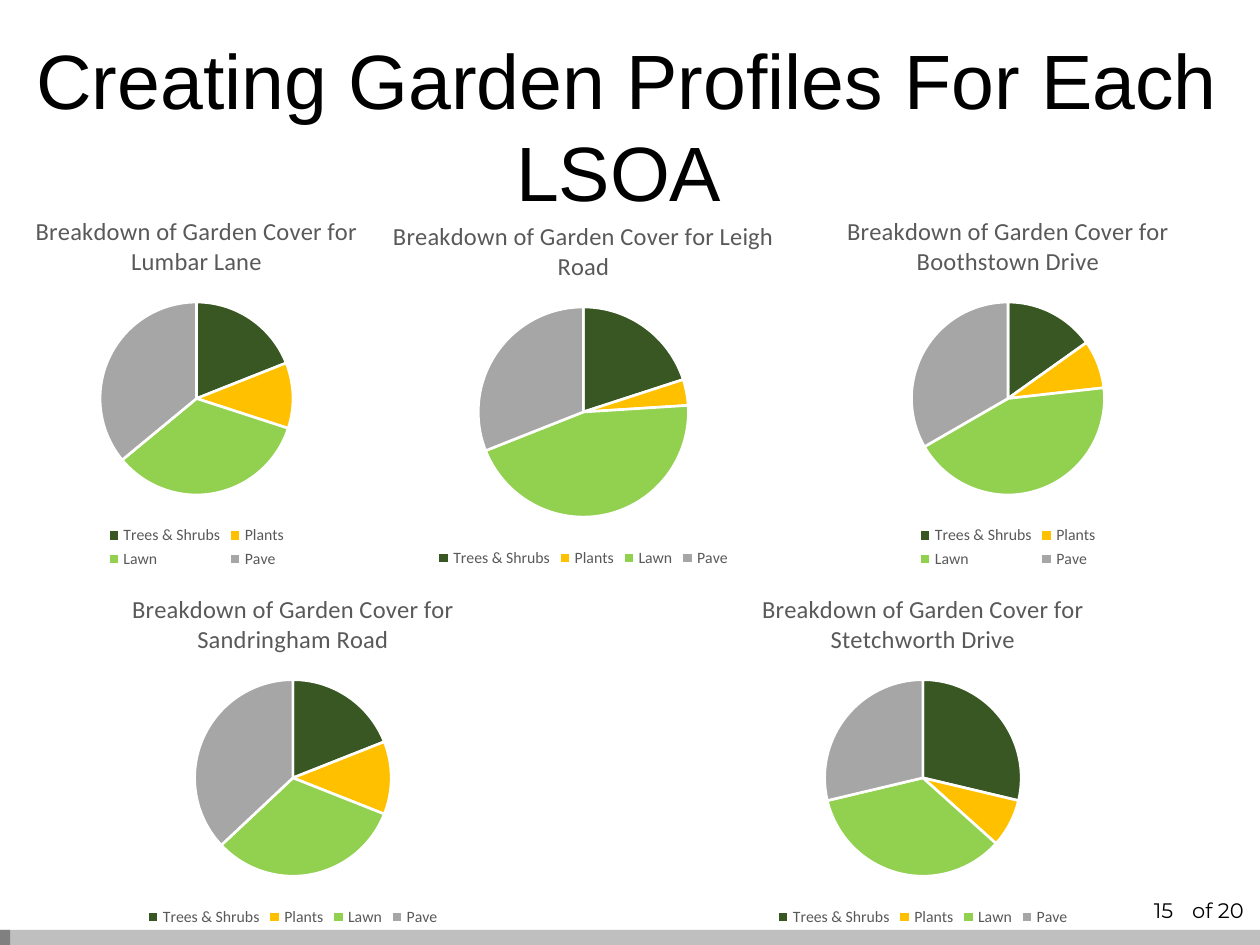
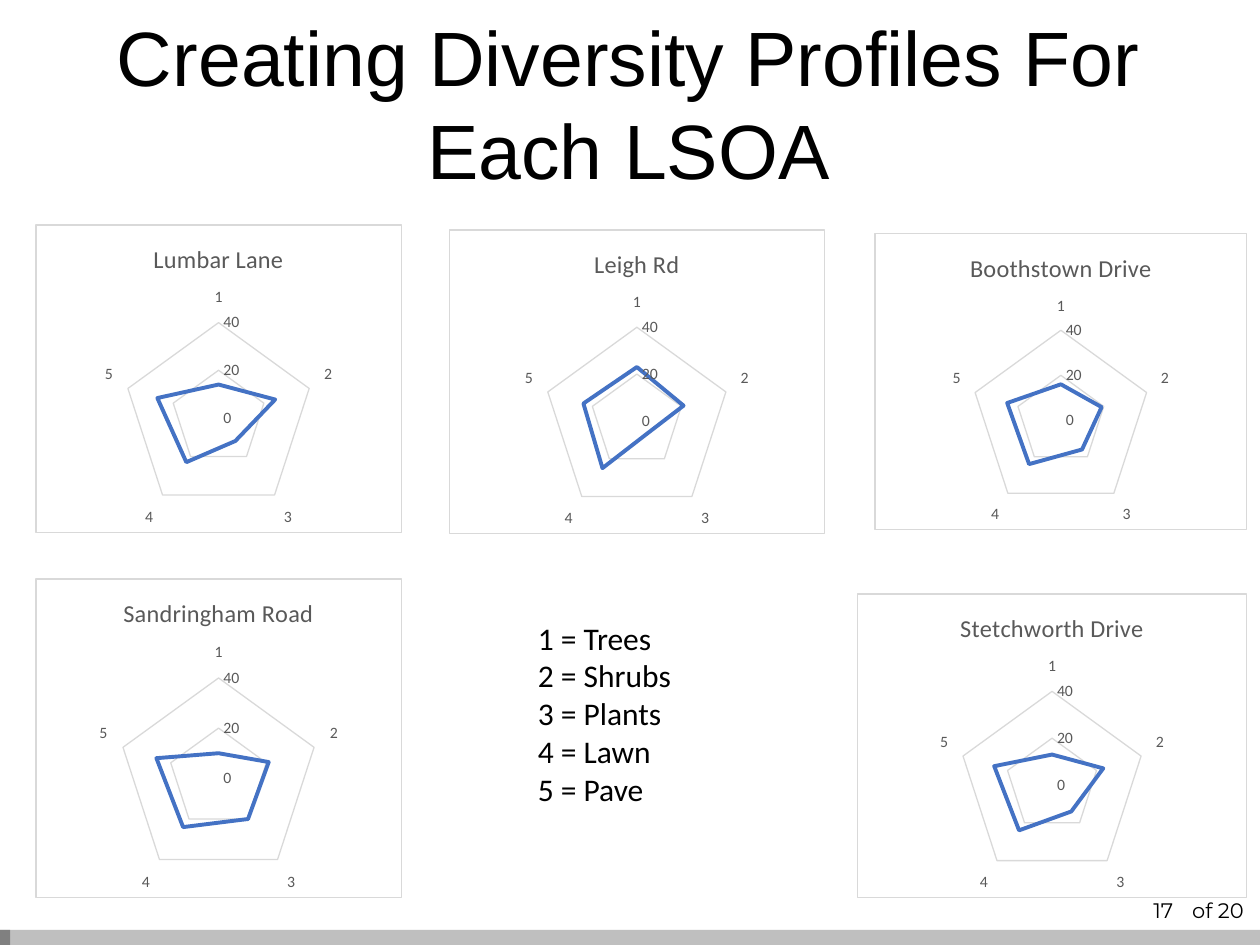
from lxml import etree
from pptx import Presentation
from pptx.chart.data import CategoryChartData
from pptx.dml.color import RGBColor
from pptx.enum.chart import XL_CHART_TYPE, XL_LEGEND_POSITION, XL_TICK_MARK
from pptx.enum.shapes import MSO_SHAPE
from pptx.enum.text import MSO_ANCHOR, PP_ALIGN
from pptx.util import Inches, Pt

PIE, RADAR = XL_CHART_TYPE.PIE, XL_CHART_TYPE.RADAR
BOTTOM = XL_LEGEND_POSITION.BOTTOM
TICK_OUT, TICK_NONE = XL_TICK_MARK.OUTSIDE, XL_TICK_MARK.NONE
RECTANGLE = MSO_SHAPE.RECTANGLE
TOP, MIDDLE = MSO_ANCHOR.TOP, MSO_ANCHOR.MIDDLE
LEFT, CENTER, RIGHT = PP_ALIGN.LEFT, PP_ALIGN.CENTER, PP_ALIGN.RIGHT

COLORS = {
    "black": "000000", "white": "FFFFFF", "label": "595959",
    "band": "BFBFBF", "band_start": "808080",
    "trees": "385723", "plants": "FFC000", "lawn": "92D050", "pave": "A6A6A6",
    "grid": "D9D9D9", "axis": "898989", "profile": "4472C4",
}
COVER_COLORS = {"Trees & Shrubs": "trees", "Plants": "plants",
                "Lawn": "lawn", "Pave": "pave"}
DIVERSITY_KEY = ["Trees", "Shrubs", "Plants", "Lawn", "Pave"]
PAGE_COUNT = 20

# place, box (left, top, width, height), values
GARDEN_COVER = [
    ("Lumbar Lane", (-0.12, 1.55, 3.36, 3), (19, 11, 34, 36)),
    ("Leigh Road", (2.6, 1.59, 4.06, 2.95), (20, 4, 45, 31)),
    ("Boothstown Drive", (6.04, 1.55, 3.92, 3), (15, 8, 43, 33)),
    ("Sandringham Road", (0.13, 4.55, 4.39, 2.84), (19, 12, 32, 37)),
    ("Stetchworth Drive", (5.1, 4.55, 4.45, 2.84), (29, 8, 35, 29)),
]
DIVERSITY = [
    ("Lumbar Lane", (0.28, 1.78, 2.91, 2.45), (14, 25, 12, 23, 27)),
    ("Leigh Rd", (3.56, 1.82, 2.99, 2.42), (23, 21, 7, 25, 24)),
    ("Boothstown Drive", (6.94, 1.85, 2.96, 2.36), (16, 19, 16, 24, 25)),
    ("Sandringham Road", (0.28, 4.59, 2.91, 2.54), (10, 21, 20, 24, 26)),
    ("Stetchworth Drive", (6.8, 4.71, 3.1, 2.42), (13, 23, 14, 24, 26)),
]


def rgb(name):
    return RGBColor.from_string(COLORS[name])


def inches(box):
    return [Inches(length) for length in box]


def format_font(font, size, color="label", name="Calibri"):
    font.size, font.name, font.bold = Pt(size), name, False
    font.color.rgb = rgb(color)


def format_line(line, color, width):
    line.color.rgb = rgb(color)
    line.width = Pt(width)


def frame_chart(chart):
    """Give the chart area a white fill and a thin border."""
    namespace = "http://schemas.openxmlformats.org/drawingml/2006/"
    properties = etree.fromstring(
        f'<c:spPr xmlns:c="{namespace}chart" xmlns:a="{namespace}main">'
        f'<a:solidFill><a:srgbClr val="{COLORS["white"]}"/></a:solidFill>'
        f'<a:ln w="{Pt(0.75)}"><a:solidFill><a:srgbClr val="{COLORS["grid"]}"/>'
        '</a:solidFill></a:ln></c:spPr>')
    chart.element.find(f"{{{namespace}chart}}chart").addnext(properties)


class Deck:
    def __init__(self):
        self.presentation = Presentation()
        self.presentation.slide_width = Inches(10)
        self.presentation.slide_height = Inches(7.5)
        self.slide = None

    def add_slide(self, page):
        self.slide = self.presentation.slides.add_slide(
            self.presentation.slide_layouts[6])
        footer = dict(size=12, font="Montserrat", align=RIGHT, anchor=MIDDLE)
        self.text(str(page), (8.94, 7, 0.47, 0.45), **footer)
        self.text(f"of {PAGE_COUNT}", (9.1, 7, 0.87, 0.45), **footer)
        self.band(10, "band")
        self.band(0.08, "band_start")

    def text(self, text, box, size=18, font="Calibri", color="black",
             align=LEFT, anchor=TOP):
        frame = self.slide.shapes.add_textbox(*inches(box)).text_frame
        frame.word_wrap = True
        frame.vertical_anchor = anchor
        frame.text = text
        for paragraph in frame.paragraphs:
            paragraph.alignment = align
            format_font(paragraph.font, size, color, font)

    def title(self, text, box):
        self.text(text, box, size=44, font="Arial", align=CENTER)

    def band(self, width, color):
        shape = self.slide.shapes.add_shape(
            RECTANGLE, *inches((0, 7.38, width, 0.12)))
        shape.shadow.inherit = False
        shape.fill.solid()
        shape.fill.fore_color.rgb = rgb(color)
        shape.line.fill.background()

    def chart(self, kind, title, box, categories, series_name, values):
        data = CategoryChartData()
        data.categories = categories
        data.add_series(series_name, values)
        chart = self.slide.shapes.add_chart(kind, *inches(box), data).chart
        format_font(chart.font, 9, "black")
        chart.has_title = True
        chart.chart_title.include_in_layout = False
        chart.chart_title.text_frame.text = title
        format_font(chart.chart_title.text_frame.paragraphs[0].runs[0].font, 14)
        chart.has_legend = False
        return chart

    def cover_pie(self, place, box, values):
        chart = self.chart(PIE, f"Breakdown of Garden Cover for {place}", box,
                           list(COVER_COLORS), "Series 1", values)
        chart.has_legend = True
        chart.legend.position = BOTTOM
        chart.legend.include_in_layout = False
        format_font(chart.legend.font, 9)
        plot = chart.plots[0]
        plot.vary_by_categories = True
        for index, color in enumerate(COVER_COLORS.values()):
            slice_format = plot.series[0].points[index].format
            slice_format.fill.solid()
            slice_format.fill.fore_color.rgb = rgb(color)
            format_line(slice_format.line, "white", 1.5)

    def diversity_radar(self, place, box, values):
        numbers = [str(number) for number in range(1, len(values) + 1)]
        chart = self.chart(RADAR, place, box, numbers, place, values)
        frame_chart(chart)
        plot = chart.plots[0]
        plot.vary_by_categories = False
        plot.series[0].smooth = False
        format_line(plot.series[0].format.line, "profile", 2.25)

        category_axis, value_axis = chart.category_axis, chart.value_axis
        for axis, tick in ((category_axis, TICK_OUT), (value_axis, TICK_NONE)):
            axis.major_tick_mark = tick
            axis.minor_tick_mark = TICK_NONE
            format_font(axis.tick_labels.font, 9)
        format_line(category_axis.format.line, "axis", 0.5)
        category_axis.has_major_gridlines = False
        value_axis.format.line.fill.background()
        value_axis.has_major_gridlines = True
        format_line(value_axis.major_gridlines.format.line, "grid", 0.75)
        value_axis.minimum_scale, value_axis.maximum_scale = 0, 40
        value_axis.major_unit = 20
        value_axis.tick_labels.number_format = "General"
        value_axis.tick_labels.number_format_is_linked = False


def main():
    deck = Deck()

    deck.add_slide(15)
    deck.title("Creating Garden Profiles For Each LSOA ", (0.08, 0.21, 9.8, 1.58))
    for place, box, values in GARDEN_COVER:
        deck.cover_pie(place, box, values)

    deck.add_slide(17)
    for place, box, values in DIVERSITY:
        deck.diversity_radar(place, box, values)
    key = [f"{number} = {name}" for number, name in enumerate(DIVERSITY_KEY, 1)]
    deck.text("\n".join(key), (4.17, 4.86, 1.77, 1.61))
    deck.title("Creating Diversity Profiles For Each LSOA", (0.08, 0.03, 9.82, 1.7))

    deck.presentation.save("out.pptx")


if __name__ == "__main__":
    main()
